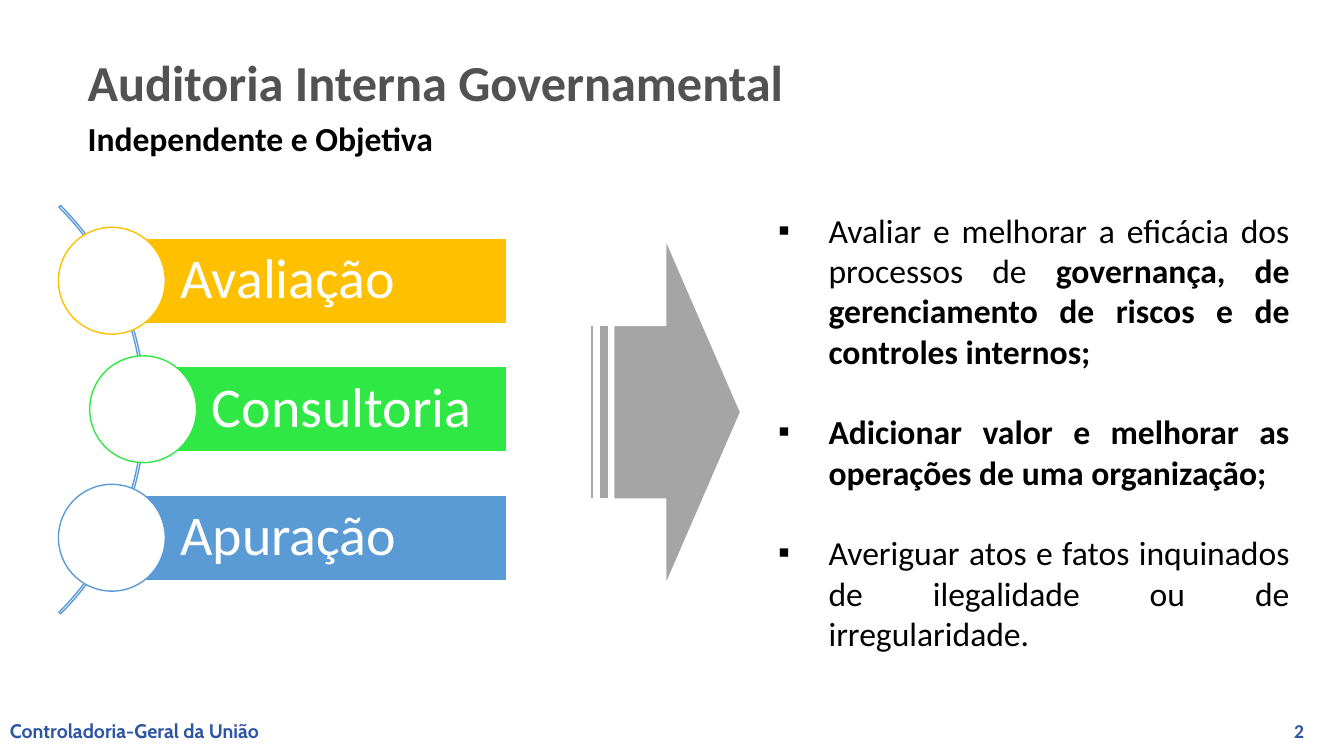
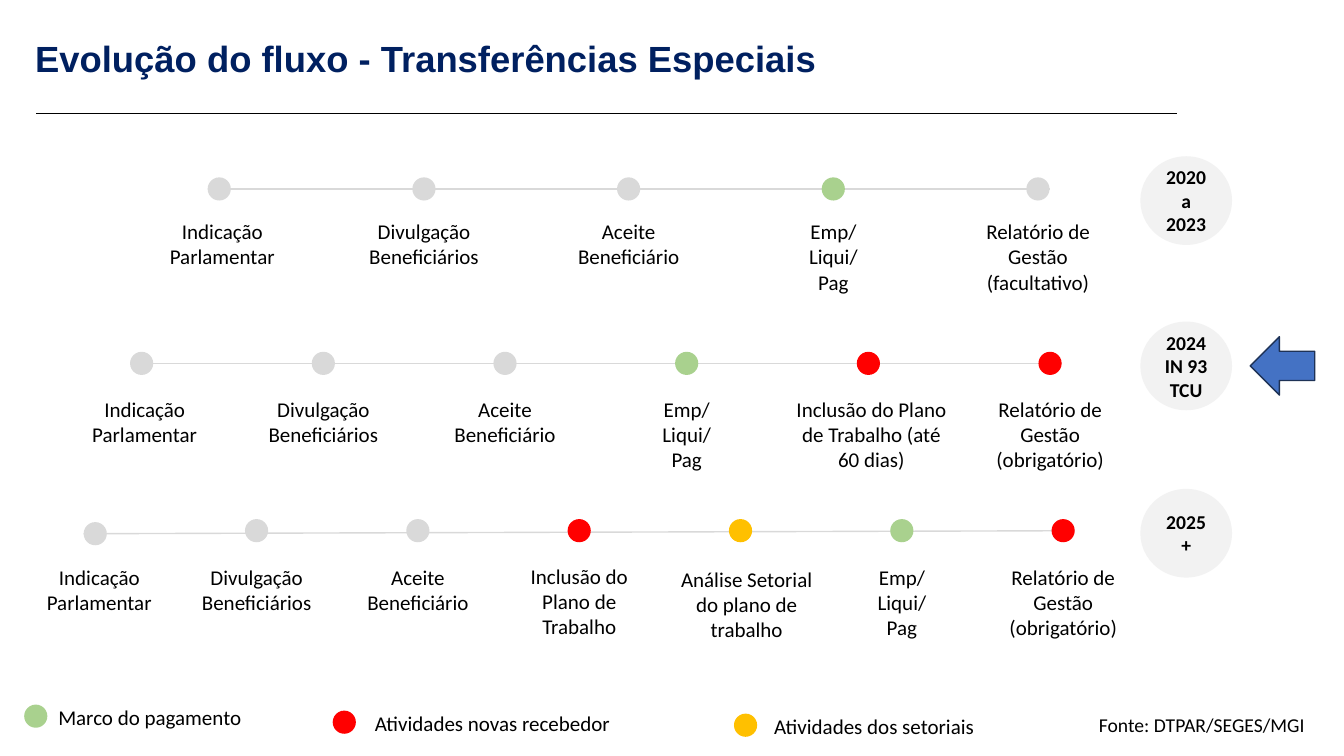
from dataclasses import dataclass
from lxml.etree import SubElement
from pptx import Presentation
from pptx.dml.color import RGBColor as Rgb
from pptx.enum.shapes import MSO_CONNECTOR as Link, MSO_SHAPE as Kind
from pptx.enum.text import MSO_ANCHOR as Anchor, PP_ALIGN as Align
from pptx.oxml.ns import qn
from pptx.util import Inches, Pt


@dataclass(frozen=True)
class Theme:
    font: str = "Calibri"
    head: str = "Arial"
    foot: str = "Cabin"
    black: str = "000000"
    white: str = "FFFFFF"
    slate: str = "525252"
    navy: str = "002060"
    brand: str = "2D55A3"
    gray: str = "A5A5A5"
    rail: str = "D9D9D9"
    pale: str = "F2F2F2"
    gold: str = "FFC000"
    lime: str = "30E845"
    sky: str = "5B9BD5"
    sage: str = "A9D18E"
    red: str = "FF0000"
    blue: str = "4472C4"
    edge: str = "1E3256"
    title: int = 36
    topic: int = 26
    body: int = 24
    bar: int = 40
    label: int = 15
    small: int = 14


T = Theme()
DOT = 0.23


@dataclass(frozen=True)
class Stop:
    lines: tuple
    tone: str = T.rail
    width: float = 1.28
    dx: float = 0
    dy: float = 0
    sink: float = 0


# Shared helpers
def write(frame, paras, size=T.body, color=T.black, bold=False, font=T.font,
          align=Align.LEFT, anchor=Anchor.TOP, inset=None, line=None,
          gap=0, bullet=None, indent=0.5):
    """Fill a frame; a paragraph is a string or a list of (text, bold) runs."""
    frame.word_wrap = True
    frame.vertical_anchor = anchor
    if inset is not None:
        frame.margin_left = Inches(inset)
    for i, para in enumerate([paras] if isinstance(paras, str) else paras):
        p = frame.add_paragraph() if i else frame.paragraphs[0]
        p.alignment = align
        if line:
            p.line_spacing = line
        if i and gap:
            p.space_before = Pt(gap)
        if bullet:
            props = p._p.get_or_add_pPr()
            props.set("marL", str(Inches(indent)))
            props.set("indent", str(-Inches(indent)))
            SubElement(props, qn("a:buFont")).set("typeface", T.head)
            SubElement(props, qn("a:buChar")).set("char", bullet)
        for text, heavy in [(para, bold)] if isinstance(para, str) else para:
            r = p.add_run()
            r.text = text
            r.font.name, r.font.size, r.font.bold = font, Pt(size), heavy
            r.font.color.rgb = Rgb.from_string(color)


def label(slide, box, paras, **fmt):
    write(slide.shapes.add_textbox(*map(Inches, box)).text_frame, paras, **fmt)


def shape(slide, kind, box, fill=None, edge=None, width=1):
    s = slide.shapes.add_shape(kind, *map(Inches, box))
    s.shadow.inherit = False
    if fill:
        s.fill.solid()
        s.fill.fore_color.rgb = Rgb.from_string(fill)
    else:
        s.fill.background()
    if edge:
        s.line.color.rgb = Rgb.from_string(edge)
        s.line.width = Pt(width)
    else:
        s.line.fill.background()
    return s


def dot(slide, x, y, tone):
    shape(slide, Kind.OVAL, (x, y, DOT, DOT), tone)


def rule(slide, start, end, color, width):
    c = slide.shapes.add_connector(Link.STRAIGHT, *map(Inches, start + end))
    c.line.color.rgb = Rgb.from_string(color)
    c.line.width = Pt(width)
    SubElement(c._element.spPr, qn("a:effectLst"))


def title(slide, box, text, **fmt):
    label(slide, box, text, bold=True, **fmt)


def footer(slide, y, name, page):
    style = dict(size=T.small, color=T.brand, bold=True)
    label(slide, (0, y, 7.49, 0.34), name, font=T.foot, **style)
    label(slide, (12.69, y, 0.39, 0.34), page, align=Align.CENTER, **style)


# Audit slide
def roles(slide, box, items):
    """Bars with round heads that follow an arc."""
    x, y, w, h = box
    arc = shape(slide, Kind.BLOCK_ARC, (x - 4.87, y - 1.16, 5.73, 5.73),
                edge=T.sky)
    for i, turn in enumerate((189, 27, 0.004)):
        arc.adjustments[i] = turn
    tall, disc = 0.85, 1.06
    step = (h - tall) / (len(items) - 1)
    for i, (text, tone, shift) in enumerate(items):
        left, top = x + shift, y + i * step
        bar = shape(slide, Kind.RECTANGLE,
                    (left + disc / 2, top, w - shift - disc / 2, tall),
                    tone, T.white)
        write(bar.text_frame, text, size=T.bar, color=T.white, line=0.9,
              anchor=Anchor.MIDDLE, inset=0.68)
        shape(slide, Kind.OVAL, (left, top + (tall - disc) / 2, disc, disc),
              T.white, tone)


def audit(slide):
    title(slide, (0.77, 0.53, 12.3, 0.99), "Auditoria Interna Governamental",
          size=T.title, color=T.slate, line=0.9)
    title(slide, (0.77, 1.12, 4.08, 0.5), "Independente e Objetiva")
    roles(slide, (0.58, 2.36, 4.45, 3.4), [
        ("Avaliação", T.gold, 0),
        ("Consultoria", T.lime, 0.31),
        ("Apuração", T.sky, 0),
    ])
    shape(slide, Kind.STRIPED_RIGHT_ARROW, (5.85, 2.36, 1.5, 3.46),
          T.gray, T.white, 1.5)
    label(slide, (7.62, 2.03, 5.27, 4.54), [
        [("Avaliar e melhorar a eficácia dos processos de ", False),
         ("governança, de gerenciamento de riscos e de controles internos;",
          True)],
        [("Adicionar valor e melhorar as operações de uma organização;",
          True)],
        "Averiguar atos e fatos inquinados de ilegalidade ou de "
        "irregularidade.",
    ], align=Align.JUSTIFY, bullet="▪", gap=28.8)
    footer(slide, 7.08, "Controladoria-Geral da União", "2")


# Timeline slide
def track(slide, box, drop, stops):
    """Evenly spaced stops on a rail, each with a label below."""
    x, y, w = box
    step = (w - DOT) / (len(stops) - 1)
    mid = y + DOT / 2
    rule(slide, (x, mid + stops[0].sink), (x + w, mid), T.rail, 1)
    for i, s in enumerate(stops):
        left = x + i * step
        dot(slide, left, y + s.sink, s.tone)
        tall = 0.61 if len(s.lines) == 1 else 0.86
        label(slide, (left + DOT / 2 - s.width / 2 + s.dx, y + drop + s.dy,
                      s.width, tall),
              s.lines, size=T.label, align=Align.CENTER)


def badge(slide, y, paras):
    b = shape(slide, Kind.OVAL, (11.31, y, 0.91, 0.88), T.pale)
    write(b.text_frame, paras, size=T.small, bold=True,
          align=Align.CENTER, anchor=Anchor.MIDDLE)


def legend(slide, items):
    for x, y, gap, tone, text in items:
        dot(slide, x, y, tone)
        label(slide, (x + gap, y - 0.05, 3, 0.35), text, size=T.label)


def flow(slide):
    title(slide, (0.25, 0.31, 11.03, 0.54),
          "Evolução do fluxo - Transferências Especiais",
          size=T.topic, color=T.navy, font=T.head)
    rule(slide, (0.36, 1.12), (11.67, 1.12), T.black, 0.5)

    # Stops that recur
    name = ("Indicação Parlamentar",)
    first = Stop(name, width=1.35, dx=0.03)
    share = Stop(("Divulgação Beneficiários",), width=1.41)
    agree = Stop(("Aceite Beneficiário",), width=1.41)
    pay = Stop(("Emp/", "Liqui/", "Pag"), T.sage)
    report = "Relatório de Gestão"
    must = Stop((report, "(obrigatório)"), T.red)

    # Tracks
    track(slide, (2.06, 1.76, 8.35), 0.36,
          [first, share, agree, pay, Stop((report, "(facultativo)"))])
    track(slide, (1.29, 3.49, 9.24), 0.39,
          [first, share, agree, pay,
           Stop(("Inclusão do Plano de Trabalho (até 60 dias)",), T.red,
                1.73, 0.03), must])
    track(slide, (0.83, 5.15, 9.83), 0.4,
          [Stop(name, width=1.35, dx=0.04, sink=0.03), share, agree,
           Stop(("Inclusão do Plano de Trabalho",), T.red, dy=-0.01),
           Stop(("Análise Setorial do plano de trabalho",), T.gold,
                1.61, 0.06, 0.02), pay, must])

    # Periods
    badge(slide, 1.55, "2020 a 2023")
    badge(slide, 3.19, ["2024", "IN 93 TCU"])
    badge(slide, 4.85, "2025 +")
    shape(slide, Kind.LEFT_ARROW, (12.4, 3.34, 0.64, 0.58), T.blue, T.edge)

    # Legend and source
    legend(slide, [
        (0.24, 6.99, 0.24, T.sage, "Marco do pagamento"),
        (3.3, 7.05, 0.32, T.red, "Atividades novas recebedor"),
        (7.28, 7.08, 0.3, T.gold, "Atividades dos setoriais"),
    ])
    label(slide, (10.8, 7.02, 2.29, 0.34), "Fonte: DTPAR/SEGES/MGI",
          size=T.small)


def main():
    deck = Presentation()
    deck.slide_width, deck.slide_height = Inches(13.33), Inches(7.5)
    for build in (audit, flow):
        build(deck.slides.add_slide(deck.slide_layouts[6]))
    deck.save("out.pptx")


if __name__ == "__main__":
    main()
